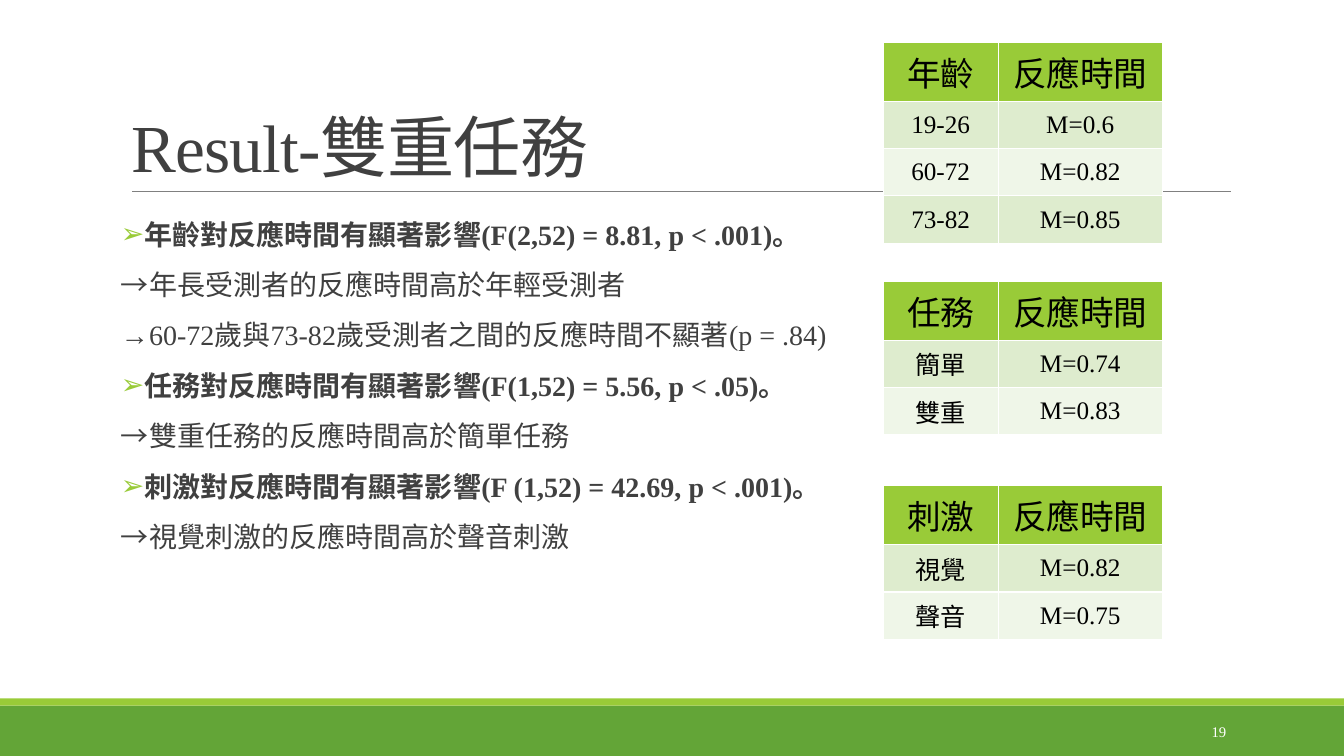
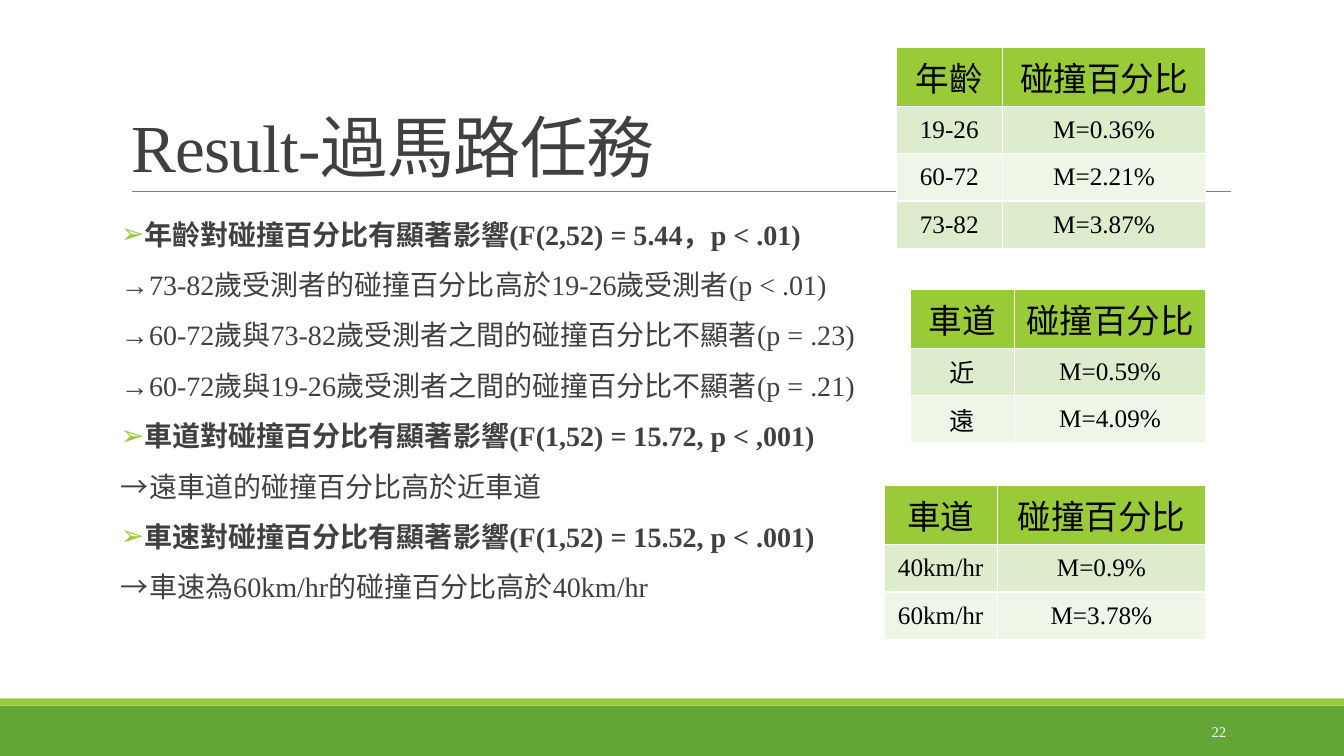
from lxml import etree
from pptx import Presentation
from pptx.dml.color import RGBColor
from pptx.enum.shapes import MSO_CONNECTOR, MSO_SHAPE
from pptx.enum.text import MSO_ANCHOR, MSO_AUTO_SIZE, PP_ALIGN
from pptx.oxml.ns import qn
from pptx.util import Inches, Pt

RECTANGLE = MSO_SHAPE.RECTANGLE
STRAIGHT = MSO_CONNECTOR.STRAIGHT
TOP, MIDDLE, BOTTOM = MSO_ANCHOR.TOP, MSO_ANCHOR.MIDDLE, MSO_ANCHOR.BOTTOM
LEFT, CENTER, RIGHT = PP_ALIGN.LEFT, PP_ALIGN.CENTER, PP_ALIGN.RIGHT
NO_AUTOFIT = MSO_AUTO_SIZE.NONE

COLORS = {
    "band": "63A537",
    "accent": "99CB38",
    "rule": "808080",
    "text": "404040",
    "cell_text": "000000",
    "white": "FFFFFF",
    "odd_row": "DEECCE",
    "even_row": "EFF6E8",
}
FONT = "Times New Roman"
SLIDE_W, SLIDE_H = 13.33, 7.5
ROW_H = 0.47
HANGING = Inches(0.1)

TITLE_BOX = (1.2, 0.31, 11, 1.59)
FINDINGS_BOX = (1.2, 2.02, 11, 4.4)
NUMBER_BOX = (10.83, 7.06, 1.43, 0.4)
BANDS = [((0, 7, SLIDE_W, 0.5), "band"), ((0, 6.93, SLIDE_W, 0.07), "accent")]

FRAME = {"word_wrap": True, "auto_size": NO_AUTOFIT}
TITLE_FRAME = {**FRAME, "vertical_anchor": BOTTOM}
FINDINGS_FRAME = {**FRAME, "vertical_anchor": TOP, "margin_left": 0, "margin_right": 0}
NUMBER_FRAME = {**FRAME, "vertical_anchor": MIDDLE}

TITLE_PARAGRAPH = {"alignment": LEFT, "line_spacing": 0.85}
FINDING_PARAGRAPH = {"alignment": LEFT, "line_spacing": 1.25, "space_after": Pt(3)}

RESULTS = [
    {
        "title": "Result-雙重任務",
        "number": "19",
        "findings": [
            "年齡對反應時間有顯著影響(F(2,52) = 8.81, p < .001)。",
            "→年長受測者的反應時間高於年輕受測者",
            "→60-72歲與73-82歲受測者之間的反應時間不顯著(p = .84)",
            "任務對反應時間有顯著影響(F(1,52) = 5.56, p < .05)。",
            "→雙重任務的反應時間高於簡單任務",
            "刺激對反應時間有顯著影響(F (1,52) = 42.69, p < .001)。",
            "→視覺刺激的反應時間高於聲音刺激",
        ],
        "measure": "反應時間",
        "tables_right": 11.53,
        "tables": [
            ("年齡", 0.42, (1.14, 1.63),
             [("19-26", "M=0.6"), ("60-72", "M=0.82"), ("73-82", "M=0.85")]),
            ("任務", 2.79, (1.14, 1.63), [("簡單", "M=0.74"), ("雙重", "M=0.83")]),
            ("刺激", 4.82, (1.14, 1.63), [("視覺", "M=0.82"), ("聲音", "M=0.75")]),
        ],
    },
    {
        "title": "Result-過馬路任務",
        "number": "22",
        "findings": [
            "年齡對碰撞百分比有顯著影響(F(2,52) = 5.44，p < .01)",
            "→73-82歲受測者的碰撞百分比高於19-26歲受測者(p < .01)",
            "→60-72歲與73-82歲受測者之間的碰撞百分比不顯著(p = .23)",
            "→60-72歲與19-26歲受測者之間的碰撞百分比不顯著(p = .21)",
            "車道對碰撞百分比有顯著影響(F(1,52) = 15.72, p < ,001)",
            "→遠車道的碰撞百分比高於近車道",
            "車速對碰撞百分比有顯著影響(F(1,52) = 15.52, p < .001)",
            "→車速為60km/hr的碰撞百分比高於40km/hr",
        ],
        "measure": "碰撞百分比",
        "tables_right": 11.96,
        "tables": [
            ("年齡", 0.47, (1.05, 2.02),
             [("19-26", "M=0.36%"), ("60-72", "M=2.21%"), ("73-82", "M=3.87%")]),
            ("車道", 2.87, (1.03, 1.9), [("近", "M=0.59%"), ("遠", "M=4.09%")]),
            ("車道", 4.82, (1.12, 2.07), [("40km/hr", "M=0.9%"), ("60km/hr", "M=3.78%")]),
        ],
    },
]


def rgb(name):
    return RGBColor.from_string(COLORS[name])


def apply(target, values):
    for name, value in values.items():
        setattr(target, name, value)


def place(shape, box):
    apply(shape, dict(zip(("left", "top", "width", "height"), map(Inches, box))))


def write(paragraph, text, size, color, bold=False):
    run = paragraph.add_run()
    run.text = text
    apply(run.font, {"name": FONT, "size": Pt(size), "bold": bold})
    run.font.color.rgb = rgb(color)
    return run


def set_bullet(paragraph, char=None):
    """Give a hanging bullet, or clear the inherited one when char is None."""
    properties = paragraph._p.get_or_add_pPr()
    indent = HANGING if char else 0
    properties.set("marL", str(indent))
    properties.set("indent", str(-indent))
    if char:
        bullet_color = etree.SubElement(properties, qn("a:buClr"))
        etree.SubElement(bullet_color, qn("a:srgbClr"), val=COLORS["accent"])
        etree.SubElement(properties, qn("a:buChar"), char=char)
    else:
        etree.SubElement(properties, qn("a:buNone"))


def add_backdrop(slide):
    for box, color in BANDS:
        band = slide.shapes.add_shape(RECTANGLE, *map(Inches, box))
        band.shadow.inherit = False
        band.fill.solid()
        band.fill.fore_color.rgb = rgb(color)
        band.line.fill.background()
    rule = slide.shapes.add_connector(STRAIGHT, *map(Inches, (1.31, 1.9, 12.21, 1.9)))
    rule.line.color.rgb = rgb("rule")
    rule.line.width = Pt(0.5)
    etree.SubElement(rule._element.spPr, qn("a:effectLst"))


def fill_title(title, text, box):
    place(title, box)
    apply(title.text_frame, TITLE_FRAME)
    heading = title.text_frame.paragraphs[0]
    apply(heading, TITLE_PARAGRAPH)
    run = write(heading, text, 48, "text")
    run.font._element.set("spc", "-50")


def fill_findings(body, findings, box):
    """Lines that open with an arrow are details; the others are bold bullets."""
    place(body, box)
    frame = body.text_frame
    apply(frame, FINDINGS_FRAME)
    for index, finding in enumerate(findings):
        paragraph = frame.add_paragraph() if index else frame.paragraphs[0]
        is_main = not finding.startswith("→")
        set_bullet(paragraph, "➢" if is_main else None)
        apply(paragraph, FINDING_PARAGRAPH)
        paragraph.space_before = Pt(3 if index else 0)
        write(paragraph, finding, 20, "text", is_main)


def add_means_table(slide, rows, widths, right, top):
    width = sum(widths)
    table = slide.shapes.add_table(
        len(rows), len(widths), Inches(right - width), Inches(top),
        Inches(width), Inches(ROW_H * len(rows))).table
    for column, column_width in zip(table.columns, widths):
        column.width = Inches(column_width)
    for r, row in enumerate(rows):
        fill = "accent" if r == 0 else ("odd_row" if r % 2 else "even_row")
        for c, text in enumerate(row):
            cell = table.cell(r, c)
            cell.vertical_anchor = MIDDLE
            cell.fill.solid()
            cell.fill.fore_color.rgb = rgb(fill)
            paragraph = cell.text_frame.paragraphs[0]
            paragraph.alignment = CENTER
            write(paragraph, text, 18 if r else 24, "cell_text")


def add_page_number(slide, number, box):
    label = slide.shapes.add_textbox(*map(Inches, box))
    apply(label.text_frame, NUMBER_FRAME)
    paragraph = label.text_frame.paragraphs[0]
    paragraph.alignment = RIGHT
    write(paragraph, number, 10.5, "white")


def add_result_slide(deck, result):
    slide = deck.slides.add_slide(deck.slide_layouts[1])
    add_backdrop(slide)
    fill_title(slide.shapes.title, result["title"], TITLE_BOX)
    fill_findings(slide.placeholders[1], result["findings"], FINDINGS_BOX)
    for factor, top, widths, means in result["tables"]:
        rows = [(factor, result["measure"]), *means]
        add_means_table(slide, rows, widths, result["tables_right"], top)
    add_page_number(slide, result["number"], NUMBER_BOX)


def main():
    deck = Presentation()
    deck.slide_width, deck.slide_height = Inches(SLIDE_W), Inches(SLIDE_H)
    for result in RESULTS:
        add_result_slide(deck, result)
    deck.save("out.pptx")


if __name__ == "__main__":
    main()
